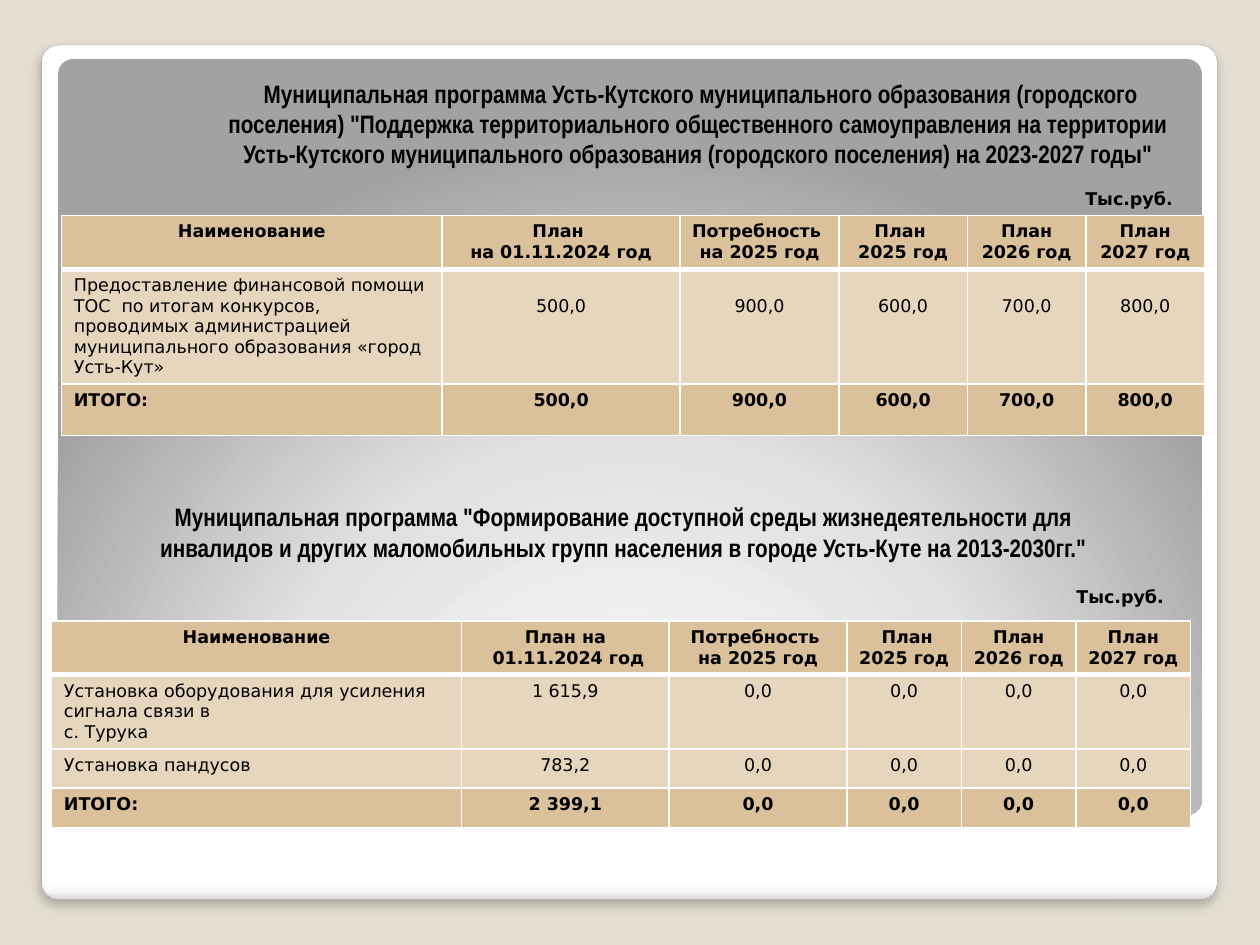
from lxml import etree
from pptx import Presentation
from pptx.dml.color import RGBColor
from pptx.enum.shapes import MSO_SHAPE
from pptx.enum.text import MSO_ANCHOR, MSO_AUTO_SIZE, PP_ALIGN
from pptx.oxml import parse_xml
from pptx.util import Cm, Pt

ROUNDED = MSO_SHAPE.ROUNDED_RECTANGLE
LEFT, CENTER = PP_ALIGN.LEFT, PP_ALIGN.CENTER
MIDDLE, BOTTOM = MSO_ANCHOR.MIDDLE, MSO_ANCHOR.BOTTOM
NO_FIT = MSO_AUTO_SIZE.NONE

NS = "http://schemas.openxmlformats.org/drawingml/2006/main"
TITLE_FONT, TABLE_FONT = "Arial Narrow", "DejaVu Sans"
SAND, DARK_TAN, LIGHT_TAN = "E3DED1", "DAC19B", "E6D6BD"
BLACK, WHITE = "000000", "FFFFFF"

UNIT = "Тыс.руб."
FIRST_TITLE = (
    " Муниципальная программа Усть-Кутского муниципального образования "
    "(городского поселения) \"Поддержка территориального общественного "
    "самоуправления на территории Усть-Кутского муниципального образования "
    "(городского поселения) на 2023-2027 годы\"")
SECOND_TITLE = (
    "Муниципальная программа \"Формирование доступной среды жизнедеятельности "
    "для инвалидов и других маломобильных групп населения в городе Усть-Куте "
    "на 2013-2030гг.\"")

# Each line break inside a cell starts a new paragraph
FIRST_ROWS = [
    ["Наименование", "План \nна 01.11.2024 год", "Потребность \nна 2025 год",
     "План \n2025 год", "План 2026 год", "План\n2027 год"],
    ["Предоставление финансовой помощи ТОС  по итогам конкурсов, проводимых "
     "администрацией муниципального образования «город Усть-Кут»",
     "500,0", "900,0", "600,0", "700,0", "800,0"],
    ["ИТОГО:", "500,0", "900,0", "600,0", "700,0", "800,0"],
]
ZEROS = ["0,0"] * 4
SECOND_ROWS = [
    ["Наименование", "План на\n 01.11.2024 год", "Потребность \nна 2025 год",
     " План 2025 год", "План 2026 год", "План 2027 год"],
    ["Установка оборудования для усиления сигнала связи в\nс. Турука",
     "1 615,9", *ZEROS],
    ["Установка пандусов", "783,2", *ZEROS],
    ["ИТОГО:", "2 399,1", *ZEROS],
]


def color(value):
    return RGBColor.from_string(value)


def write(frame, text, size, font, bold=True, align=CENTER):
    for index, line in enumerate(text.split("\n")):
        para = frame.paragraphs[0] if index == 0 else frame.add_paragraph()
        para.alignment = align
        span = para.add_run()
        span.text = line
        span.font.size = Pt(size)
        span.font.name = font
        span.font.bold = bold
        span.font.color.rgb = color(BLACK)


def place(shape, left, top, width, height):
    shape.left, shape.top = Cm(left), Cm(top)
    shape.width, shape.height = Cm(width), Cm(height)


def fill_frame(box, text, size, font, anchor):
    frame = box.text_frame
    frame.word_wrap = True
    frame.auto_size = NO_FIT
    frame.vertical_anchor = anchor
    write(frame, text, size, font)


def add_text(page, text, area, size, font, anchor):
    box = page.shapes.add_textbox(*map(Cm, area))
    fill_frame(box, text, size, font, anchor)


def add_panel(page, area, stops, direction):
    """Add a rounded panel with a gradient given by stops and direction XML."""
    panel = page.shapes.add_shape(ROUNDED, *map(Cm, area))
    panel.adjustments[0] = 0.02
    panel.shadow.inherit = False
    panel.line.fill.background()
    stop_xml = "".join(
        f'<a:gs pos="{position * 1000}"><a:srgbClr val="{value}"/></a:gs>'
        for position, value in stops)
    panel.element.spPr.find(f"{{{NS}}}prstGeom").addnext(parse_xml(
        f'<a:gradFill xmlns:a="{NS}" rotWithShape="1">'
        f"<a:gsLst>{stop_xml}</a:gsLst>{direction}</a:gradFill>"))
    return panel


def add_soft_shadow(panel):
    effects = panel.element.spPr.find(f"{{{NS}}}effectLst")
    effects.append(parse_xml(
        f'<a:outerShdw xmlns:a="{NS}" blurRad="{Pt(6)}" dist="{Pt(4)}" '
        f'dir="5400000" algn="t" rotWithShape="0"><a:srgbClr val="{BLACK}">'
        '<a:alpha val="25000"/></a:srgbClr></a:outerShdw>'))


def add_borders(cell, top, bottom):
    properties = cell._tc.get_or_add_tcPr()
    for side, width in (("L", 1), ("R", 1), ("T", top), ("B", bottom)):
        line = etree.SubElement(properties, f"{{{NS}}}ln{side}", w=str(Pt(width)))
        solid = etree.SubElement(line, f"{{{NS}}}solidFill")
        etree.SubElement(solid, f"{{{NS}}}srgbClr", val=WHITE)


def add_budget_table(page, rows, left, top, widths, heights, value_top=0.13):
    """Add a table; value_top is the top margin of the numbers in row 1."""
    table = page.shapes.add_table(
        len(rows), len(widths), Cm(left), Cm(top),
        Cm(sum(widths)), Cm(sum(heights))).table
    table.first_row = table.horz_banding = False
    for column, width in zip(table.columns, widths):
        column.width = Cm(width)
    for r, (texts, height) in enumerate(zip(rows, heights)):
        table.rows[r].height = Cm(height)
        strong = r in (0, len(rows) - 1)
        for c, text in enumerate(texts):
            cell = table.cell(r, c)
            add_borders(cell, 3 if r == 1 else 1, 3 if r == 0 else 1)
            cell.fill.solid()
            cell.fill.fore_color.rgb = color(DARK_TAN if strong else LIGHT_TAN)
            cell.margin_left = cell.margin_right = Cm(0.2 if c else 0.25)
            cell.margin_top = Cm(value_top if r == 1 and c else 0.13)
            write(cell.text_frame, text, 10, TABLE_FONT, strong,
                  CENTER if c or r == 0 else LEFT)


def main():
    deck = Presentation()
    deck.slide_width, deck.slide_height = Cm(25.4), Cm(19.05)
    page = deck.slides.add_slide(deck.slide_layouts[5])
    page.background.fill.solid()
    page.background.fill.fore_color.rgb = color(SAND)

    # White card and grey panel behind the content
    card = add_panel(page, (0.84, 0.91, 23.7, 17.22),
                     [(0, WHITE), (98, WHITE), (99, "F7F7F7"), (100, "DADADA")],
                     '<a:lin ang="5400000" scaled="0"/>')
    card.line.color.rgb = color("A4A4A4")
    card.line.width = Pt(0.16)
    add_soft_shadow(card)
    panel = add_panel(page, (1.17, 1.19, 23.06, 15.24),
                      [(0, WHITE), (55, "E1E1E1"), (100, "A2A2A2")],
                      '<a:path path="circle"><a:fillToRect l="50000" '
                      't="175000" r="50000" b="-75000"/></a:path>')

    # First programme
    title = page.shapes.title
    for backdrop in (card, panel):
        title.element.addprevious(backdrop.element)
    place(title, 3.86, 1.55, 20.42, 1.98)
    fill_frame(title, FIRST_TITLE, 14.4, TITLE_FONT, BOTTOM)
    add_budget_table(page, FIRST_ROWS, 1.24, 4.34,
                     [7.67, 4.8, 3.2, 2.59, 2.39, 2.39], [1.09, 2.3, 1.04],
                     value_top=0.54)
    add_text(page, UNIT, (21.49, 3.68, 2.54, 0.64), 10, TABLE_FONT, MIDDLE)

    # Second programme
    add_text(page, SECOND_TITLE, (2.36, 10.06, 20.42, 1.4), 14.4, TITLE_FONT, BOTTOM)
    add_text(page, UNIT, (21.31, 11.71, 2.54, 0.64), 10, TABLE_FONT, MIDDLE)
    add_budget_table(page, SECOND_ROWS, 1.04, 12.52,
                     [8.26, 4.19, 3.58] + [2.31] * 3, [1.07, 1.5, 0.79, 0.79])

    deck.save("out.pptx")


if __name__ == "__main__":
    main()
